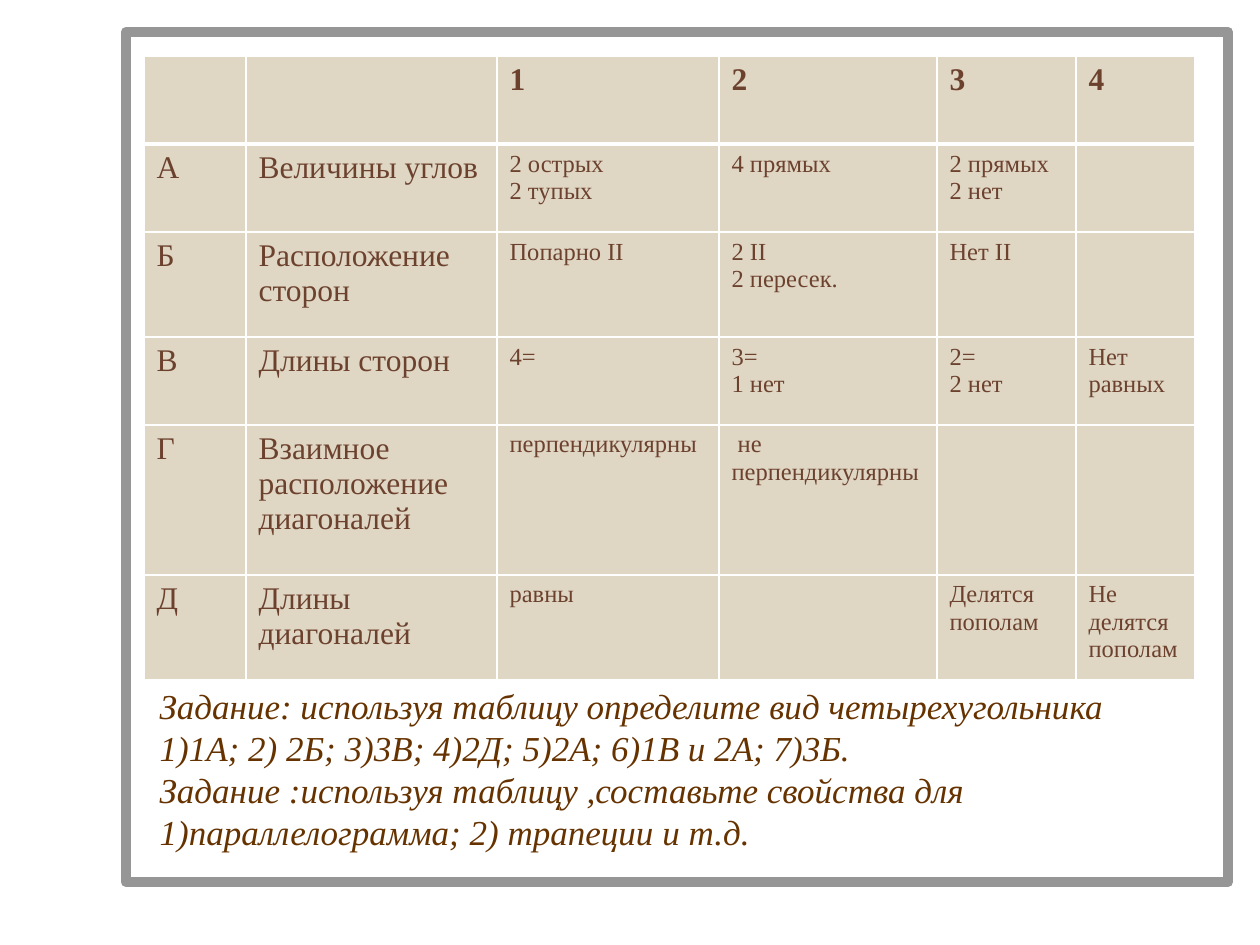
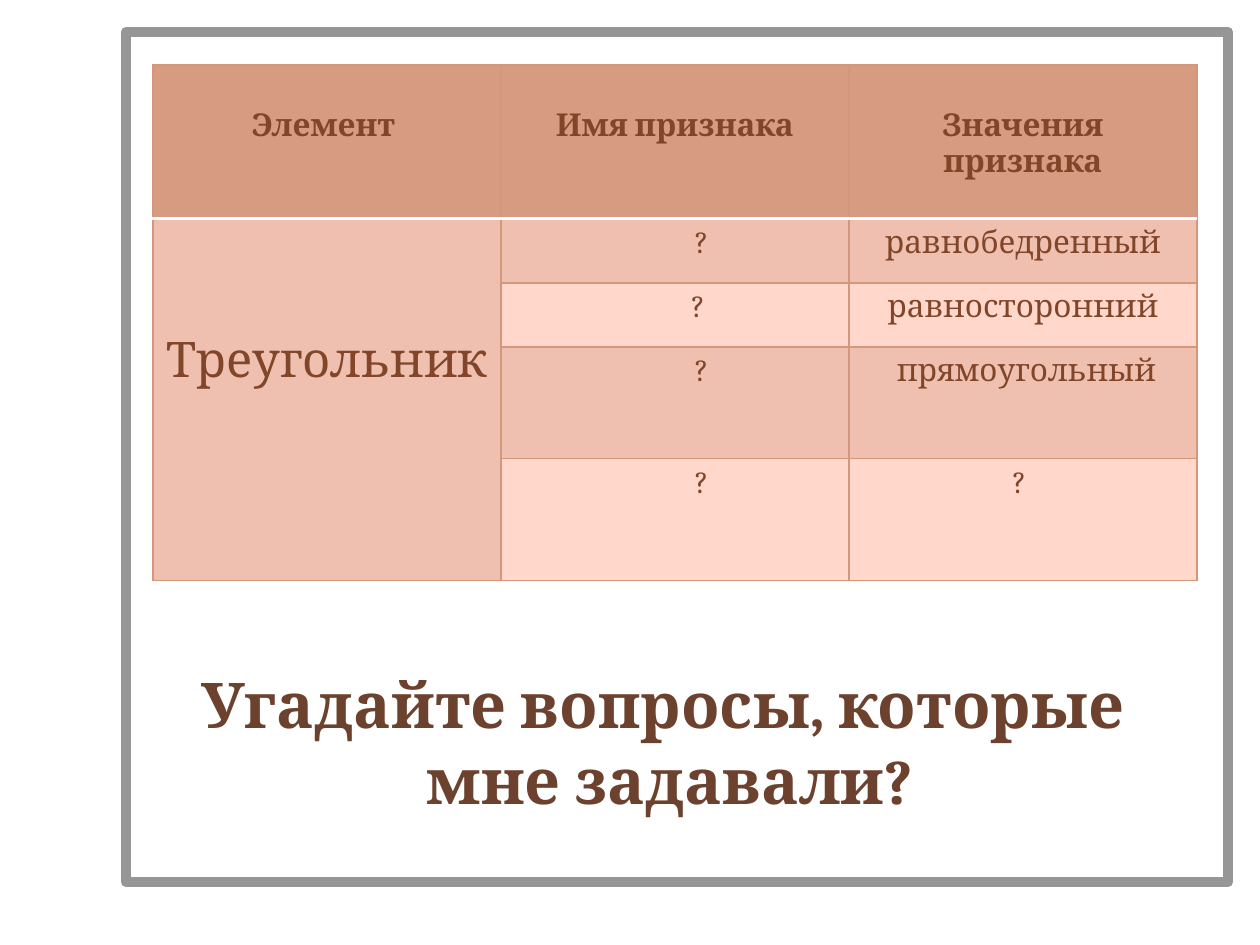
import pptx
import pptx.dml.color
import pptx.enum.shapes
import pptx.enum.text
import pptx.oxml
import pptx.oxml.ns
import pptx.util

EMU_PER_PX = 914400 / 126
ALIGN = pptx.enum.text.PP_ALIGN
ANCHOR = pptx.enum.text.MSO_ANCHOR
TITLE_ONLY, BLANK = 5, 6

WHITE = "FFFFFF"
FRAME_GREY = "969696"
TITLE_BROWN = "663300"
TEXT_BROWN = "6C422F"
RUST = "81452A"
SAND = "DFD6C3"
TERRACOTTA = "D69B80"
TERRACOTTA_LINE = "D3977B"
ROSE = "EFC0AF"
PALE_ROSE = "FFD8CB"


def px(length):
    return pptx.util.Emu(round(length * EMU_PER_PX))


def color(hex_value):
    return pptx.dml.color.RGBColor.from_string(hex_value)


class Deck:
    """Holds the shared style and the current slide."""

    def __init__(self):
        self.presentation = pptx.Presentation()
        self.presentation.slide_width = px(1260)
        self.presentation.slide_height = px(945)
        self.slide = None

    def new_slide(self, layout):
        layouts = self.presentation.slide_layouts
        self.slide = self.presentation.slides.add_slide(layouts[layout])
        self.frame()

    def frame(self):
        shape = self.slide.shapes.add_shape(
            pptx.enum.shapes.MSO_SHAPE.RECTANGLE,
            px(126), px(32), px(1102), px(850))
        shape.shadow.inherit = False
        shape.fill.solid()
        shape.fill.fore_color.rgb = color(WHITE)
        shape.line.color.rgb = color(FRAME_GREY)
        shape.line.width = pptx.util.Pt(6)
        # Behind the title placeholder
        self.slide.shapes._spTree.insert(2, shape._element)

    def add_lines(self, text_frame, lines, size, font, hex_value, bold=False,
                  italic=False, align=ALIGN.LEFT, spacing=None):
        text_frame.word_wrap = True
        for index, line in enumerate(lines):
            paragraph = (text_frame.add_paragraph() if index
                         else text_frame.paragraphs[0])
            paragraph.alignment = align
            if spacing:
                paragraph.line_spacing = pptx.util.Pt(spacing)
            run = paragraph.add_run()
            run.text = line
            run.font.name = font
            run.font.size = pptx.util.Pt(size)
            run.font.bold = bold
            run.font.italic = italic
            run.font.color.rgb = color(hex_value)

    def place(self, shape, left, top, width, height, anchor):
        shape.left, shape.top = px(left), px(top)
        shape.width, shape.height = px(width), px(height)
        shape.text_frame.auto_size = pptx.enum.text.MSO_AUTO_SIZE.NONE
        shape.text_frame.vertical_anchor = anchor

    def title(self, lines, left, top, width, height, **style):
        shape = self.slide.shapes.title
        self.place(shape, left, top, width, height, ANCHOR.MIDDLE)
        self.add_lines(shape.text_frame, lines, **style)

    def text(self, lines, left, top, width, height, **style):
        shape = self.slide.shapes.add_textbox(0, 0, 0, 0)
        self.place(shape, left, top, width, height, ANCHOR.BOTTOM)
        self.add_lines(shape.text_frame, lines, **style)

    def table(self, left, top, columns, rows):
        table = self.slide.shapes.add_table(
            len(rows), len(columns), px(left), px(top),
            px(sum(columns)), px(sum(rows))).table
        table.first_row = table.horz_banding = False
        for column, width in zip(table.columns, columns):
            column.width = px(width)
        for row, height in zip(table.rows, rows):
            row.height = px(height)
        return table

    def cell(self, cell, lines, fill, borders, **style):
        """Borders are (colour, points) for left, right, top and bottom."""
        cell.fill.solid()
        cell.fill.fore_color.rgb = color(fill)
        properties = cell._tc.get_or_add_tcPr()
        for index, (side, border) in enumerate(zip("LRTB", borders)):
            hex_value, points = border
            properties.insert(index, pptx.oxml.parse_xml(
                f'<a:ln{side} {pptx.oxml.ns.nsdecls("a")} '
                f'w="{pptx.util.Pt(points)}"><a:solidFill>'
                f'<a:srgbClr val="{hex_value}"/></a:solidFill></a:ln{side}>'))
        if lines:
            self.add_lines(cell.text_frame, lines, **style)

    def borders(self, row, thin, header_rule):
        """Thin lines all round, and a thick rule under the header row."""
        return (thin, thin, header_rule if row == 1 else thin,
                header_rule if row == 0 else thin)


def quadrilaterals(deck):
    deck.new_slide(TITLE_ONLY)
    deck.title(
        ["Задание: используя таблицу определите вид четырехугольника",
         "1)1А; 2) 2Б; 3)3В; 4)2Д; 5)2А; 6)1В и 2А; 7)3Б.",
         "Задание :используя таблицу ,составьте свойства для",
         "1)параллелограмма; 2) трапеции и т.д."],
        147, 670, 1071, 198, size=20, font="Times New Roman",
        hex_value=TITLE_BROWN, italic=True, spacing=24)

    # Property table; "|" separates paragraphs in a cell
    properties = [
        ["", "", "1", "2", "3", "4"],
        ["А", "Величины углов", "2 острых|2 тупых", "4 прямых",
         "2 прямых|2 нет", ""],
        ["Б", "Расположение сторон", "Попарно II", "2 II|2 пересек.",
         "Нет II", ""],
        ["В", "Длины сторон", "4=", "3=|1 нет", "2=|2 нет", "Нет равных"],
        ["Г", "Взаимное расположение диагоналей", "перпендикулярны",
         " не перпендикулярны", "", ""],
        ["Д", "Длины диагоналей", "равны", "", "Делятся пополам",
         "Не делятся пополам"],
    ]
    table = deck.table(144, 56, [102, 251, 222, 218, 139, 119],
                       [88, 88, 105, 88, 150, 105])
    for row, values in enumerate(properties):
        for column, value in enumerate(values):
            deck.cell(
                table.cell(row, column), value.split("|") if value else [],
                SAND, deck.borders(row, (WHITE, 1), (WHITE, 3)),
                size=18 if row == 0 or column < 2 else 14,
                font="Times New Roman", hex_value=TEXT_BROWN, bold=row == 0)


def triangle(deck):
    deck.new_slide(BLANK)

    # Feature table
    features = [
        ["Элемент ", "Имя признака", "Значения признака"],
        ["Треугольник", "?", "равнобедренный"],
        ["", "?", "равносторонний"],
        ["", "?", " прямоугольный"],
        ["", "?", "? "],
    ]
    question_indents = [0, 53, 46, 53, 53]
    row_fills = [TERRACOTTA, ROSE, PALE_ROSE, ROSE, PALE_ROSE]
    table = deck.table(153, 65, [348] * 3, [154, 64, 64, 112, 122])
    table.cell(1, 0).merge(table.cell(4, 0))
    for row, values in enumerate(features):
        for column, value in enumerate(values):
            cell = table.cell(row, column)
            element = row > 0 and column == 0
            deck.cell(
                cell, [value] if value else [],
                ROSE if element else row_fills[row],
                deck.borders(row, (TERRACOTTA_LINE, 0.75), (WHITE, 2)),
                size=28 if element else 18, font="Cambria",
                hex_value=RUST, bold=row == 0, align=ALIGN.CENTER)
            if row == 0:
                cell.margin_top = px(43)
            elif element:
                cell.margin_left = cell.margin_right = px(6)
                cell.margin_top = px(114 if row == 1 else 6)
            elif column == 1:
                cell.margin_left = px(13 + question_indents[row])

    # Question to the class
    deck.text(["Угадайте вопросы, которые ", "мне задавали?"],
              144, 352, 1052, 471, size=36, font="Cambria",
              hex_value=TEXT_BROWN, bold=True, align=ALIGN.CENTER)


def main():
    deck = Deck()
    quadrilaterals(deck)
    triangle(deck)
    deck.presentation.save("out.pptx")


if __name__ == "__main__":
    main()
